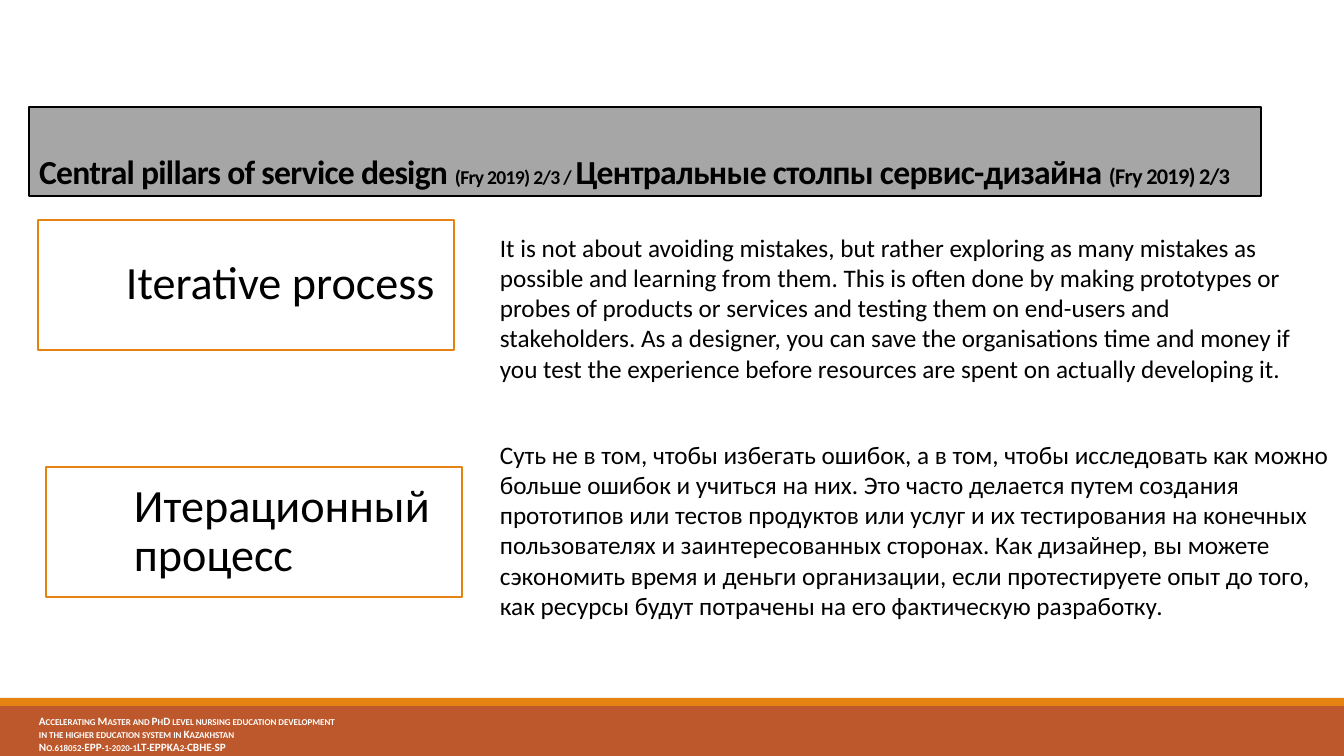
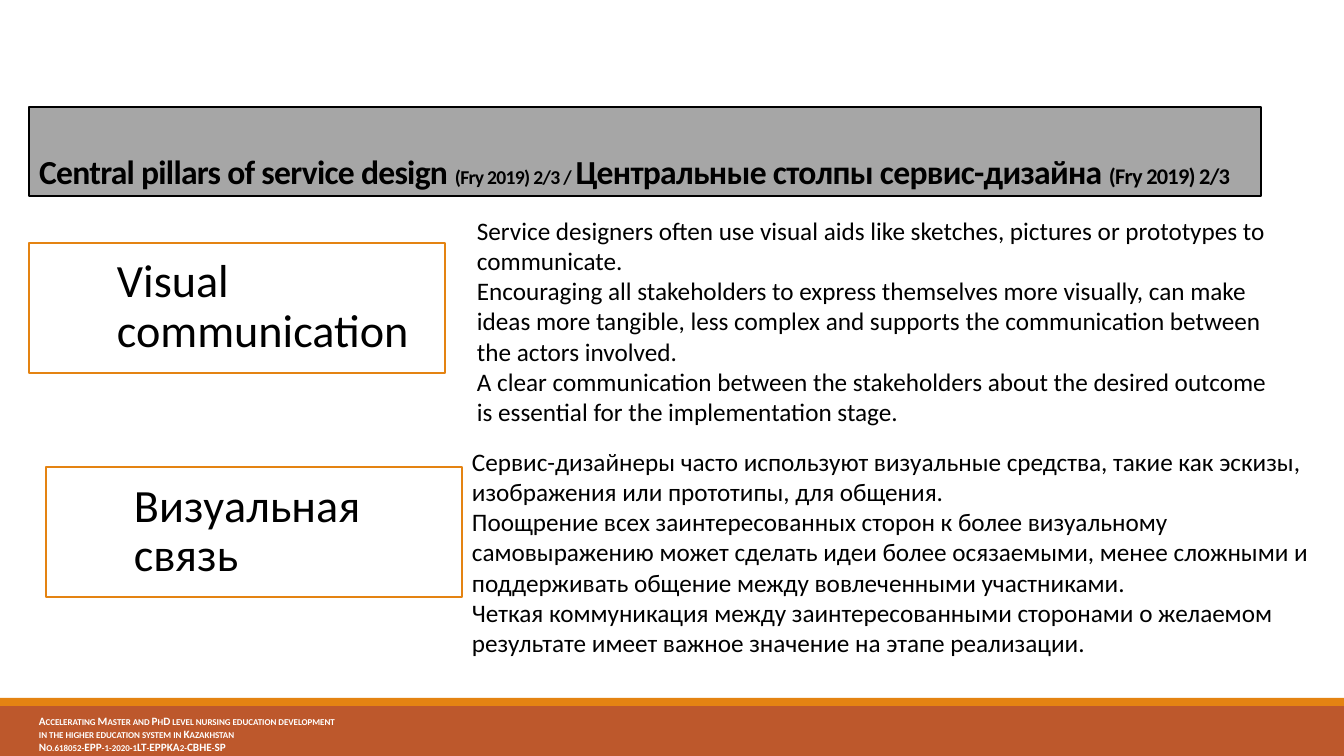
from dataclasses import dataclass

from lxml import etree
from pptx import Presentation
from pptx import util as u
from pptx.dml.color import RGBColor as Rgb
from pptx.enum import shapes, text
from pptx.oxml import ns


@dataclass(frozen=True)
class Theme:
    font: str = "Calibri"
    black: Rgb = Rgb(0x00, 0x00, 0x00)
    white: Rgb = Rgb(0xFF, 0xFF, 0xFF)
    grey: Rgb = Rgb(0xA6, 0xA6, 0xA6)
    rust: Rgb = Rgb(0xBD, 0x58, 0x2C)
    amber: Rgb = Rgb(0xE4, 0x83, 0x12)
    head: int = 24
    label: int = 33
    body: int = 18
    foot: int = 8


T = Theme()
WIDE, HIGH = 1344, 756
SCALE = 12192000 / WIDE


def px(*vals):
    return [u.Emu(round(v * SCALE)) for v in vals]


def style(par, size, color=T.black, bold=False):
    par.alignment = text.PP_ALIGN.LEFT
    font = par.font
    font.name, font.size, font.bold = T.font, u.Pt(size), bold
    font.color.rgb = color


# Shared wording
TITLE = [
    ("Central pillars of service design ", T.head),
    ("(Fry 2019) 2/3 / ", 14),
    ("Центральные столпы сервис-дизайна ", T.head),
    ("(Fry 2019) 2/3", 16),
]
FOOT = [
    "Accelerating Master and PhD level nursing education development",
    "in the higher education system in Kazakhstan",
    "No.618052-EPP-1-2020-1LT-EPPKA2-CBHE-SP",
]
BANDS = [(706, 50, T.rust), (698, 8, T.amber)]

# Each slide: labels (left, top, words) and texts (box, paragraphs)
SLIDES = [
    (
        [(38, 220, "Iterative process"), (46, 467, "Итерационный процесс")],
        [
            ((490, 227, 815, 163), [
                "It is not about avoiding mistakes, but rather exploring as many "
                "mistakes as possible and learning from them. This is often done by "
                "making prototypes or probes of products or services and testing them "
                "on end-users and stakeholders. As a designer, you can save the "
                "organisations time and money if you test the experience before "
                "resources are spent on actually developing it.",
            ]),
            ((490, 434, 852, 194), [
                "Суть не в том, чтобы избегать ошибок, а в том, чтобы исследовать как "
                "можно больше ошибок и учиться на них. Это часто делается путем "
                "создания прототипов или тестов продуктов или услуг и их тестирования "
                "на конечных пользователях и заинтересованных сторонах. Как дизайнер, "
                "вы можете сэкономить время и деньги организации, если протестируете "
                "опыт до того, как ресурсы будут потрачены на его фактическую "
                "разработку.",
            ]),
        ],
    ),
    (
        [(29, 243, "Visual communication"), (46, 467, "Визуальная связь")],
        [
            ((467, 210, 829, 224), [
                "Service designers often use visual aids like sketches, pictures or "
                "prototypes to communicate.",
                "Encouraging all stakeholders to express themselves more visually, can "
                "make ideas more tangible, less complex and supports the communication "
                "between the actors involved.",
                "A clear communication between the stakeholders about the desired "
                "outcome is essential for the implementation stage.",
            ]),
            ((462, 441, 864, 224), [
                "Сервис-дизайнеры часто используют визуальные средства, такие как "
                "эскизы, изображения или прототипы, для общения.",
                "Поощрение всех заинтересованных сторон к более визуальному "
                "самовыражению может сделать идеи более осязаемыми, менее сложными и "
                "поддерживать общение между вовлеченными участниками.",
                "Четкая коммуникация между заинтересованными сторонами о желаемом "
                "результате имеет важное значение на этапе реализации.",
            ]),
        ],
    ),
]

prs = Presentation()
prs.slide_width, prs.slide_height = px(WIDE, HIGH)

for labels, texts in SLIDES:
    slide = prs.slides.add_slide(prs.slide_layouts[5])

    # Footer bands
    for top, high, color in BANDS:
        band = slide.shapes.add_shape(
            shapes.MSO_SHAPE.RECTANGLE, *px(0, top, WIDE, high))
        band.shadow.inherit = False
        band.fill.solid()
        band.fill.fore_color.rgb = color
        band.line.fill.background()

    # Footer words in small capitals
    foot = slide.shapes.add_textbox(*px(29, 709, 463, 47)).text_frame
    foot.word_wrap = True
    foot.text = "\n".join(FOOT)
    for par in foot.paragraphs:
        style(par, T.foot, T.white, True)
        for run in par.runs:
            run._r.get_or_add_rPr().set("cap", "small")

    # Title
    title = slide.shapes.title
    title.left, title.top, title.width, title.height = px(29, 107, 1232, 89)
    title.fill.solid()
    title.fill.fore_color.rgb = T.grey
    title.line.color.rgb = T.black
    title.line.width = u.Pt(1)
    frame = title.text_frame
    frame.auto_size = text.MSO_AUTO_SIZE.NONE
    frame.vertical_anchor = text.MSO_ANCHOR.BOTTOM
    par = frame.paragraphs[0]
    par.line_spacing = 0.85
    style(par, T.head, bold=True)
    for words, size in TITLE:
        run = par.add_run()
        run.text = words
        run.font.size = u.Pt(size)
        run._r.get_or_add_rPr().set("spc", "-50")

    # Framed labels
    for left, top, words in labels:
        box = slide.shapes.add_shape(
            shapes.MSO_SHAPE.RECTANGLE, *px(left, top, 416, 130))
        box.shadow.inherit = False
        box.fill.solid()
        box.fill.fore_color.rgb = T.white
        tint = box.fill._xPr.find(".//" + ns.qn("a:srgbClr"))
        etree.SubElement(tint, ns.qn("a:alpha")).set("val", "40000")
        box.line.color.rgb = T.amber
        box.line.width = u.Pt(1)
        frame = box.text_frame
        frame.word_wrap = True
        frame.vertical_anchor = text.MSO_ANCHOR.MIDDLE
        frame.margin_left, frame.margin_right = px(88, 14)
        frame.margin_top, frame.margin_bottom = px(14, 14)
        frame.text = words
        par = frame.paragraphs[0]
        par.line_spacing = 0.9
        style(par, T.label)

    # Explanations
    for area, words in texts:
        frame = slide.shapes.add_textbox(*px(*area)).text_frame
        frame.word_wrap = True
        frame.text = "\n".join(words)
        for par in frame.paragraphs:
            style(par, T.body)

prs.save("out.pptx")
